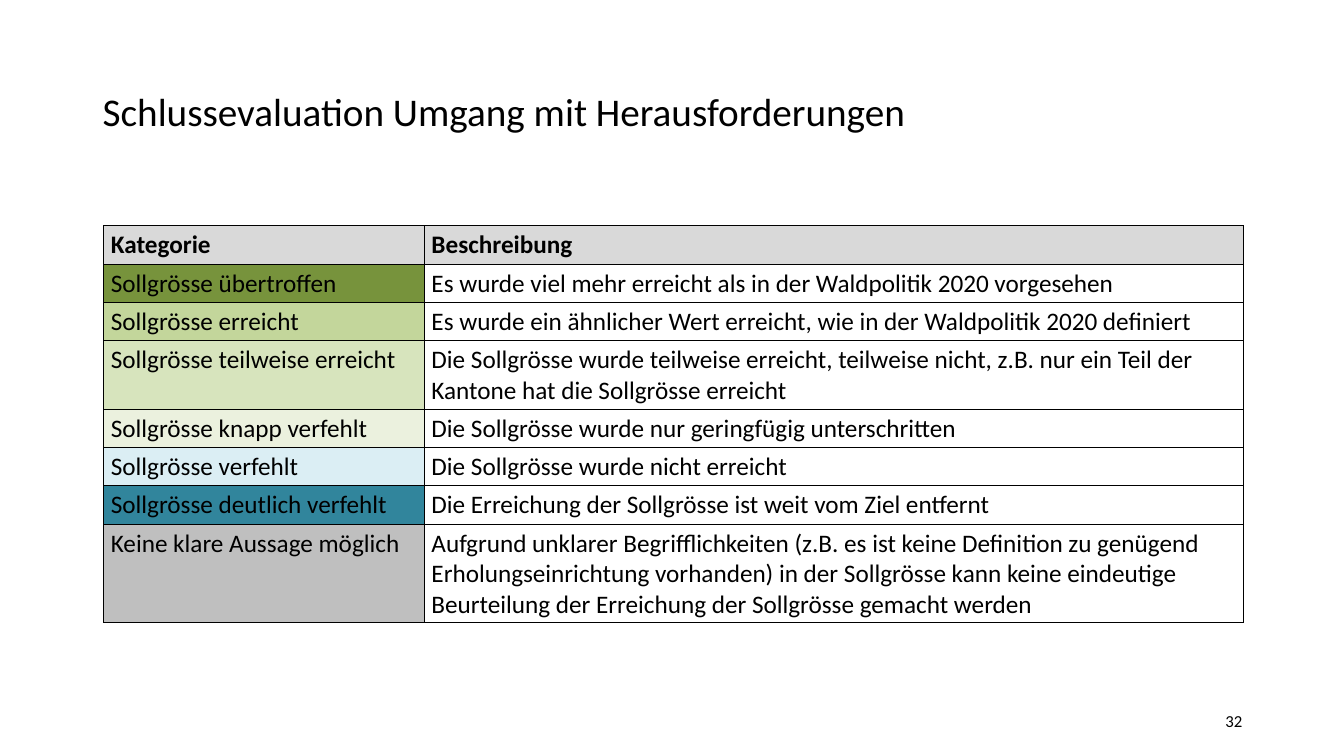
from dataclasses import dataclass

from lxml import etree
from pptx import Presentation
from pptx import util as u
from pptx.dml.color import RGBColor
from pptx.enum import text
from pptx.oxml import ns


@dataclass(frozen=True)
class Theme:
    font: str = "Calibri"
    ink: str = "000000"
    header: str = "D9D9D9"
    exceeded: str = "77933C"
    reached: str = "C3D69B"
    partly: str = "D7E4BD"
    nearly: str = "EBF1DE"
    missed: str = "DBEEF4"
    far_missed: str = "31859C"
    unclear: str = "BFBFBF"
    title_size: int = 28
    table_size: int = 18
    number_size: int = 12
    border_width: int = 1


theme = Theme()


def write(frame, words, size, align, bold=False):
    """Fill a text frame with one vertically unchanged, styled paragraph."""
    frame.word_wrap = True
    para = frame.paragraphs[0]
    para.text = words
    para.alignment = align
    font = para.runs[0].font
    font.name, font.size, font.bold = theme.font, u.Pt(size), bold
    font.color.rgb = RGBColor.from_string(theme.ink)
    return para


def add_borders(cell):
    properties = cell._tc.get_or_add_tcPr()
    for side in ("a:lnL", "a:lnR", "a:lnT", "a:lnB"):
        line = etree.SubElement(properties, ns.qn(side), w=str(u.Pt(theme.border_width)))
        fill = etree.SubElement(line, ns.qn("a:solidFill"))
        etree.SubElement(fill, ns.qn("a:srgbClr"), val=theme.ink)


deck = Presentation()
deck.slide_width, deck.slide_height = u.Inches(13.33), u.Inches(7.5)
page = deck.slides.add_slide(deck.slide_layouts[6])

title = page.shapes.add_textbox(u.Inches(0.92), u.Inches(0.4), u.Inches(11.5), u.Inches(1.45))
title.text_frame.vertical_anchor = text.MSO_ANCHOR.MIDDLE
title_para = write(title.text_frame, "Schlussevaluation Umgang mit Herausforderungen",
                   theme.title_size, text.PP_ALIGN.LEFT)
title_para.line_spacing = 0.9

# Category, description, category colour, row height
ratings = [
    ("Kategorie", "Beschreibung", theme.header, 0.29),
    ("Sollgrösse übertroffen",
     "Es wurde viel mehr erreicht als in der Waldpolitik 2020 vorgesehen",
     theme.exceeded, 0.29),
    ("Sollgrösse erreicht",
     "Es wurde ein ähnlicher Wert erreicht, wie in der Waldpolitik 2020 definiert",
     theme.reached, 0.33),
    ("Sollgrösse teilweise erreicht",
     "Die Sollgrösse wurde teilweise erreicht, teilweise nicht, z.B. nur ein Teil der "
     "Kantone hat die Sollgrösse erreicht",
     theme.partly, 0.57),
    ("Sollgrösse knapp verfehlt",
     "Die Sollgrösse wurde nur geringfügig unterschritten", theme.nearly, 0.29),
    ("Sollgrösse verfehlt", "Die Sollgrösse wurde nicht erreicht", theme.missed, 0.29),
    ("Sollgrösse deutlich verfehlt",
     "Die Erreichung der Sollgrösse ist weit vom Ziel entfernt", theme.far_missed, 0.38),
    ("Keine klare Aussage möglich",
     "Aufgrund unklarer Begrifflichkeiten (z.B. es ist keine Definition zu genügend "
     "Erholungseinrichtung vorhanden) in der Sollgrösse kann keine eindeutige "
     "Beurteilung der Erreichung der Sollgrösse gemacht werden",
     theme.unclear, 0.92),
]

table = page.shapes.add_table(len(ratings), 2, u.Inches(1.03), u.Inches(2.24),
                              u.Inches(11.3), u.Inches(3.93)).table
table.first_row = table.horz_banding = False
for column, width in zip(table.columns, (3.18, 8.12)):
    column.width = u.Inches(width)

for index, (category, description, colour, height) in enumerate(ratings):
    is_header = index == 0
    table.rows[index].height = u.Inches(height)
    align = text.PP_ALIGN.JUSTIFY if is_header else text.PP_ALIGN.LEFT
    for column, words in enumerate((category, description)):
        cell = table.cell(index, column)
        cell.margin_left = cell.margin_right = u.Inches(0.07)
        cell.margin_top = cell.margin_bottom = u.Inches(0.04)
        write(cell.text_frame, words, theme.table_size, align, is_header)
        add_borders(cell)
        if is_header or column == 0:
            cell.fill.solid()
            cell.fill.fore_color.rgb = RGBColor.from_string(colour)
        else:
            cell.fill.background()

number = page.shapes.add_textbox(u.Inches(9.42), u.Inches(6.95), u.Inches(3), u.Inches(0.4))
number.text_frame.vertical_anchor = text.MSO_ANCHOR.MIDDLE
write(number.text_frame, "32", theme.number_size, text.PP_ALIGN.RIGHT)

deck.save("out.pptx")
